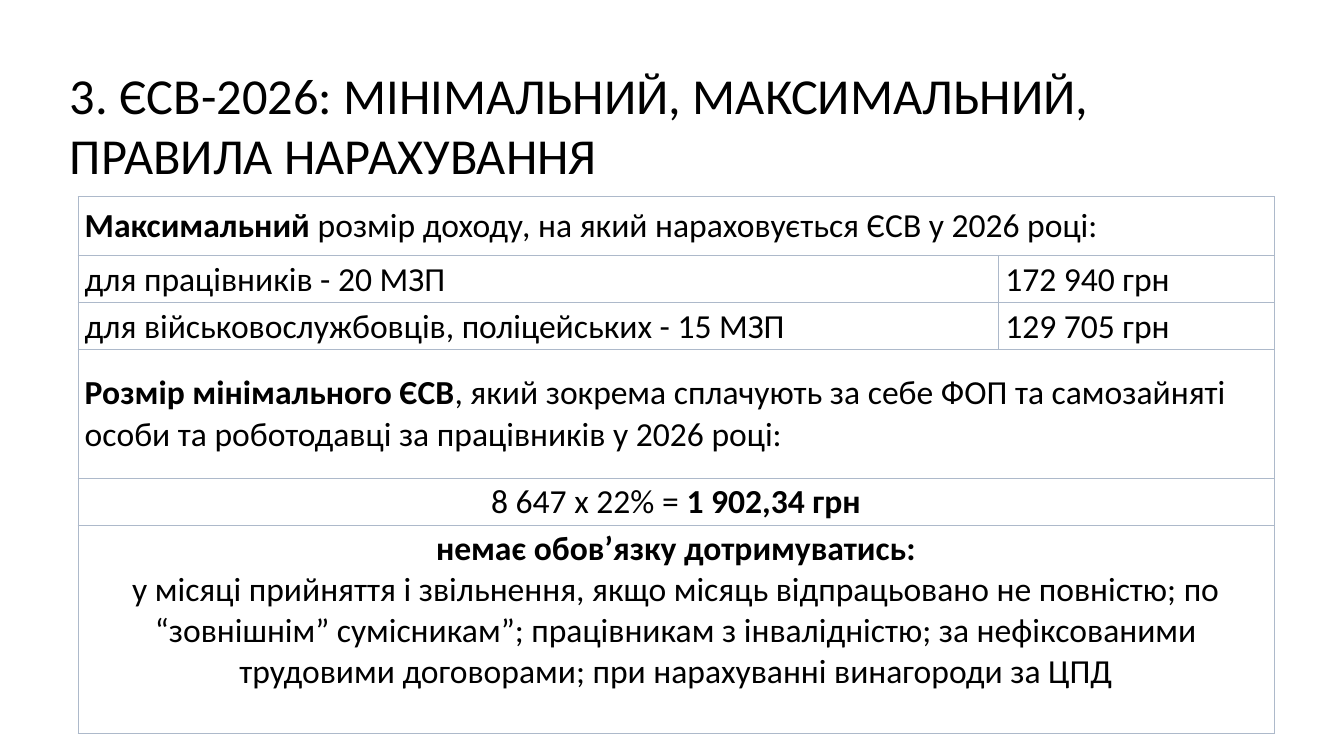
from dataclasses import dataclass

from lxml.etree import SubElement
from pptx import Presentation
from pptx.dml.color import RGBColor
from pptx.enum.text import MSO_ANCHOR as Anchor, PP_ALIGN as Align
from pptx.oxml.ns import qn
from pptx.util import Inches, Pt


@dataclass(frozen=True)
class Theme:
    font: str = "Calibri"
    ink: str = "000000"
    paper: str = "FFFFFF"
    rule: str = "ADB9CA"
    title_size: int = 54
    body_size: int = 36
    rule_width: int = 1


THEME = Theme()
SLIDE_W, SLIDE_H = Inches(20), Inches(11.25)
COLUMNS = (13.7, 4.1)
LINE_ROW = 0.7

TITLE = "3. ЄСВ-2026: МІНІМАЛЬНИЙ, МАКСИМАЛЬНИЙ, ПРАВИЛА НАРАХУВАННЯ"

# Row: height, alignment, anchor, cells; a cell is a list of paragraphs,
# a paragraph a list of (text, bold). A single cell spans the whole row.
ROWS = [
    (0.88, Align.LEFT, Anchor.MIDDLE, [
        [[("Максимальний ", True),
          ("розмір доходу, на який нараховується ЄСВ у 2026 році:", False)]]]),
    (LINE_ROW, Align.LEFT, Anchor.MIDDLE, [
        [[("для працівників - 20 МЗП", False)]],
        [[("172 940 грн", False)]]]),
    (LINE_ROW, Align.LEFT, Anchor.MIDDLE, [
        [[("для військовослужбовців, поліцейських - 15 МЗП", False)]],
        [[("129 705 грн", False)]]]),
    (1.91, Align.LEFT, Anchor.MIDDLE, [
        [[("Розмір мінімального ЄСВ", True),
          (", який зокрема сплачують за себе ФОП та самозайняті особи "
           "та роботодавці за працівників у 2026 році:", False)]]]),
    (LINE_ROW, Align.CENTER, Anchor.MIDDLE, [
        [[("8 647 х 22% = ", False), ("1 902,34 грн", True)]]]),
    (3.1, Align.CENTER, Anchor.TOP, [
        [[("немає обов’язку дотримуватись:", True)],
         [("у місяці прийняття і звільнення, якщо місяць відпрацьовано не "
           "повністю; по “зовнішнім” сумісникам”; працівникам з інвалідністю; "
           "за нефіксованими трудовими договорами; при нарахуванні "
           "винагороди за ЦПД", False)]]]),
]


def add_run(paragraph, text, size, bold=False):
    run = paragraph.add_run()
    run.text = text
    run.font.name = THEME.font
    run.font.size = Pt(size)
    run.font.bold = bold
    run.font.color.rgb = RGBColor.from_string(THEME.ink)


def write_paragraphs(frame, paragraphs, size, align=Align.LEFT):
    for index, runs in enumerate(paragraphs):
        paragraph = frame.add_paragraph() if index else frame.paragraphs[0]
        paragraph.alignment = align
        for text, bold in runs:
            add_run(paragraph, text, size, bold)


def add_borders(cell):
    """Put the four rules ahead of the fill, as the schema orders them."""
    properties = cell._tc.get_or_add_tcPr()
    for index, side in enumerate(("lnL", "lnR", "lnT", "lnB")):
        line = SubElement(properties, qn(f"a:{side}"), w=str(Pt(THEME.rule_width)))
        fill = SubElement(line, qn("a:solidFill"))
        SubElement(fill, qn("a:srgbClr"), val=THEME.rule)
        properties.insert(index, line)


def add_title(slide):
    box = slide.shapes.add_textbox(
        int(SLIDE_W * 0.047), int(SLIDE_H * 0.08),
        int(SLIDE_W * 0.9055), int(SLIDE_H * 0.17))
    box.text_frame.word_wrap = True
    write_paragraphs(box.text_frame, [[(TITLE, False)]], THEME.title_size)


def add_contribution_table(slide):
    heights = [row[0] for row in ROWS]
    table = slide.shapes.add_table(
        len(ROWS), len(COLUMNS), int(SLIDE_W * 0.058), int(SLIDE_H * 0.26),
        Inches(sum(COLUMNS)), Inches(sum(heights))).table
    table.first_row = table.horz_banding = False
    for column, width in zip(table.columns, COLUMNS):
        column.width = Inches(width)

    for r, (height, align, anchor, cells) in enumerate(ROWS):
        table.rows[r].height = Inches(height)
        # Paper and rules for every cell, merged ones included
        for c in range(len(COLUMNS)):
            cell = table.cell(r, c)
            cell.fill.solid()
            cell.fill.fore_color.rgb = RGBColor.from_string(THEME.paper)
            add_borders(cell)
        if len(cells) == 1:
            table.cell(r, 0).merge(table.cell(r, len(COLUMNS) - 1))
        # Text
        for c, paragraphs in enumerate(cells):
            cell = table.cell(r, c)
            cell.vertical_anchor = anchor
            write_paragraphs(cell.text_frame, paragraphs, THEME.body_size, align)


def main():
    deck = Presentation()
    deck.slide_width, deck.slide_height = SLIDE_W, SLIDE_H
    slide = deck.slides.add_slide(deck.slide_layouts[6])
    add_title(slide)
    add_contribution_table(slide)
    deck.save("out.pptx")


if __name__ == "__main__":
    main()
